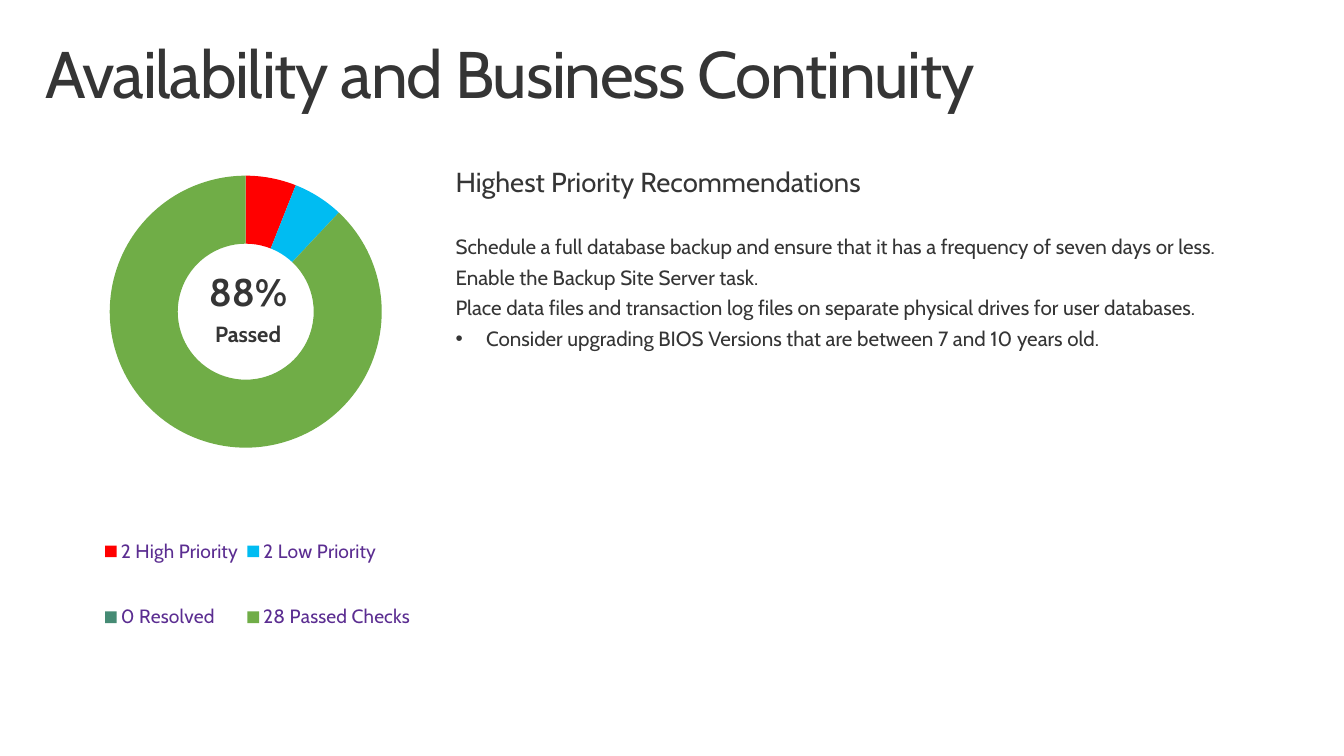
from lxml.etree import SubElement
from pptx import Presentation
from pptx.chart.data import CategoryChartData
from pptx.dml.color import RGBColor
from pptx.enum.chart import XL_CHART_TYPE as ChartType, XL_LEGEND_POSITION as LegendPos
from pptx.enum.text import PP_ALIGN as Align
from pptx.oxml import parse_xml
from pptx.oxml.ns import nsdecls, qn
from pptx.util import Inches, Pt

FONT = "Cabin"
COLORS = {
    "text": "353535", "legend": "5B2D91", "high": "FF0000",
    "low": "00BCF2", "resolved": "458B74", "passed": "70AD47",
}
SPACER = ("", None, None)
CHECKS = [
    ("2 High Priority ", 6, "high"),
    SPACER,
    ("2 Low Priority", 6, "low"),
    SPACER,
    ("0 Resolved", 0, "resolved"),
    SPACER,
    ("28 Passed Checks", 88, "passed"),
]
RECOMMENDATIONS = [
    "Schedule a full database backup and ensure that it has a frequency of seven days or less.",
    "Enable the Backup Site Server task.",
    "Place data files and transaction log files on separate physical drives for user databases.",
]
BULLETED = "Consider upgrading BIOS Versions that are between 7 and 10 years old."


def rgb(name):
    return RGBColor.from_string(COLORS[name])


def style_font(font, size, color="text"):
    font.name, font.size = FONT, Pt(size)
    font.color.rgb = rgb(color)


def add_text_frame(slide, box, inset_x=0.2, inset_y=0.16):
    tf = slide.shapes.add_textbox(*map(Inches, box)).text_frame
    tf.word_wrap = True
    tf.margin_left = tf.margin_right = Inches(inset_x)
    tf.margin_top = tf.margin_bottom = Inches(inset_y)
    return tf


def add_line(tf, text, size, bold=False, align=Align.LEFT, after=6):
    """Write one paragraph, using the frame's first one while it is empty."""
    p = tf.paragraphs[0]
    if p.runs:
        p = tf.add_paragraph()
    p.alignment, p.line_spacing, p.space_after = align, 0.9, Pt(after)
    r = p.add_run()
    r.text = text
    style_font(r.font, size)
    r.font.bold = bold
    return p


def add_bullet(p, indent):
    pPr = p._p.get_or_add_pPr()
    pPr.set("marL", str(Inches(indent)))
    pPr.set("indent", str(-Inches(indent)))
    SubElement(pPr, qn("a:buFont")).set("typeface", "Arial")
    SubElement(pPr, qn("a:buChar")).set("char", "•")


def manual_layout(x, y, w, h, inner=False):
    """Return a chart layout whose values are shares of the chart's size."""
    target = '<c:layoutTarget val="inner"/>' if inner else ""
    return parse_xml(
        f'<c:layout {nsdecls("c")}><c:manualLayout>{target}'
        '<c:xMode val="edge"/><c:yMode val="edge"/>'
        f'<c:x val="{x}"/><c:y val="{y}"/><c:w val="{w}"/><c:h val="{h}"/>'
        '</c:manualLayout></c:layout>')


def hidden_entry(i):
    """Return the legend entry that keeps category i out of the legend."""
    return parse_xml(f'<c:legendEntry {nsdecls("c")}><c:idx val="{i}"/>'
                     '<c:delete val="1"/></c:legendEntry>')


def drop_layout(parent):
    for layout in parent.findall(qn("c:layout")):
        parent.remove(layout)


def add_title(slide, box):
    p = add_line(add_text_frame(slide, box, 0.16, 0.1),
                 "Availability and Business Continuity", 48, after=0)
    p.runs[0]._r.get_or_add_rPr().set("spc", "-100")


def add_checks_chart(slide, box):
    data = CategoryChartData()
    data.categories = [name for name, _, _ in CHECKS]
    data.add_series("Series 1", [share for _, share, _ in CHECKS])
    chart = slide.shapes.add_chart(ChartType.DOUGHNUT, *map(Inches, box), data).chart
    style_font(chart.font, 10)
    chart.has_title = False

    chart.has_legend = True
    legend = chart.legend
    legend.position = LegendPos.BOTTOM
    legend.include_in_layout = False
    style_font(legend.font, 14, "legend")
    drop_layout(legend._element)
    last = legend._element.find(qn("c:legendPos"))

    plot = chart.plots[0]
    plot.vary_by_categories = True
    plot.has_data_labels = False
    for i, (name, _, color) in enumerate(CHECKS):
        if name:
            fill = plot.series[0].points[i].format.fill
            fill.solid()
            fill.fore_color.rgb = rgb(color)
        else:
            entry = hidden_entry(i)
            last.addnext(entry)
            last = entry
    last.addnext(manual_layout(0.21, 0.67, 0.66, 0.3))

    area = chart._chartSpace.chart.plotArea
    area.find(".//" + qn("c:holeSize")).set("val", "68")
    drop_layout(area)
    area.insert(0, manual_layout(0.23, 0.07, 0.57, 0.56, inner=True))


def add_score(slide, box):
    tf = add_text_frame(slide, box)
    for text, size in (("88%", 28), ("Passed", 16)):
        add_line(tf, text, size, bold=True, align=Align.CENTER)


def add_recommendations(slide, box):
    tf = add_text_frame(slide, box)
    add_line(tf, "Highest Priority Recommendations", 20, after=28)
    for text in RECOMMENDATIONS:
        add_line(tf, text, 15)
    add_bullet(add_line(tf, BULLETED, 15), 0.31)


def main():
    prs = Presentation()
    prs.slide_width, prs.slide_height = Inches(13.6), Inches(7.65)
    slide = prs.slides.add_slide(prs.slide_layouts[6])
    add_title(slide, (0.3, 0.32, 13, 1))
    add_checks_chart(slide, (0, 1.1, 4.83, 5.87))
    add_score(slide, (1.8, 2.61, 1.42, 1.2))
    add_recommendations(slide, (4.41, 1.55, 8.41, 2.2))
    prs.save("out.pptx")


if __name__ == "__main__":
    main()
